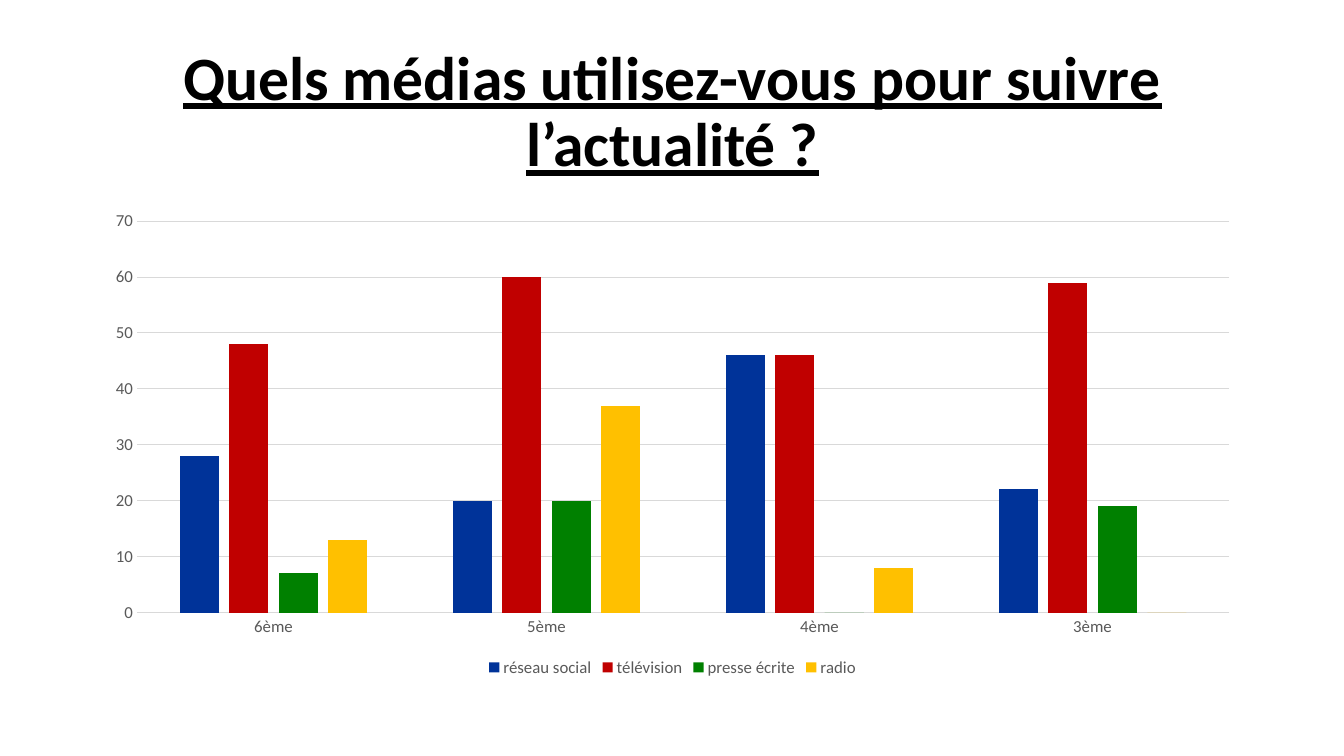
from dataclasses import dataclass

from pptx import Presentation
from pptx.chart.data import CategoryChartData
from pptx.dml.color import RGBColor
from pptx.enum.chart import XL_CHART_TYPE as ChartType
from pptx.enum.chart import XL_LEGEND_POSITION as LegendPosition
from pptx.enum.chart import XL_TICK_MARK as TickMark
from pptx.enum.text import MSO_ANCHOR as Anchor
from pptx.enum.text import PP_ALIGN as Align
from pptx.util import Inches, Pt


@dataclass(frozen=True)
class Theme:
    font: str = "Calibri"
    title_size: int = 44
    label_size: int = 12
    ink: str = "000000"
    label: str = "595959"
    grid: str = "D9D9D9"
    paper: str = "FFFFFF"
    line_width: float = 0.75


THEME = Theme()
LEVELS = ["6ème", "5ème", "4ème", "3ème"]
MEDIA = [
    ("réseau social", [28, 20, 46, 22], "003399"),
    ("télévision", [48, 60, 46, 59], "C00000"),
    ("presse écrite", [7, 20, 0, 19], "008000"),
    ("radio", [13, 37, 8, 0], "FFC000"),
]


def color(code):
    return RGBColor.from_string(code)


def format_font(font, size, code, bold=False, underline=False):
    font.name = THEME.font
    font.size = Pt(size)
    font.color.rgb = color(code)
    font.bold = bold
    font.underline = underline


def write_text(frame, text, align=Align.LEFT, spacing=1.0, **font_format):
    para = frame.paragraphs[0]
    para.alignment = align
    para.line_spacing = spacing
    span = para.add_run()
    span.text = text
    format_font(span.font, **font_format)


def format_line(line):
    line.color.rgb = color(THEME.grid)
    line.width = Pt(THEME.line_width)


def add_title(page, left, top, width, height):
    title = page.shapes.title
    title.left, title.top = Inches(left), Inches(top)
    title.width, title.height = Inches(width), Inches(height)
    title.text_frame.word_wrap = True
    title.text_frame.vertical_anchor = Anchor.MIDDLE
    write_text(title.text_frame, "Quels médias utilisez-vous pour suivre l’actualité ?",
               align=Align.CENTER, spacing=0.9, size=THEME.title_size,
               code=THEME.ink, bold=True, underline=True)


def add_media_chart(page, left, top, width, height):
    data = CategoryChartData()
    data.categories = LEVELS
    for name, values, _ in MEDIA:
        data.add_series(name, values)
    chart = page.shapes.add_chart(
        ChartType.COLUMN_CLUSTERED, Inches(left), Inches(top),
        Inches(width), Inches(height), data).chart
    chart.has_title = False
    format_font(chart.font, THEME.label_size, THEME.label)

    # Columns
    plot = chart.plots[0]
    plot.gap_width = 219
    plot.overlap = -27
    plot.vary_by_categories = False
    for series, (_, _, code) in zip(plot.series, MEDIA):
        series.format.fill.solid()
        series.format.fill.fore_color.rgb = color(code)
        series.invert_if_negative = False

    # Axes
    for axis in (chart.category_axis, chart.value_axis):
        axis.major_tick_mark = axis.minor_tick_mark = TickMark.NONE
        format_font(axis.tick_labels.font, THEME.label_size, THEME.label)
    format_line(chart.category_axis.format.line)
    values_axis = chart.value_axis
    values_axis.minimum_scale, values_axis.maximum_scale = 0, 70
    values_axis.major_unit = 10
    values_axis.format.line.fill.background()
    values_axis.has_major_gridlines = True
    format_line(values_axis.major_gridlines.format.line)

    # Legend
    chart.has_legend = True
    chart.legend.position = LegendPosition.BOTTOM
    chart.legend.include_in_layout = False
    format_font(chart.legend.font, THEME.label_size, THEME.label)


def main():
    deck = Presentation()
    deck.slide_width, deck.slide_height = Inches(13.33), Inches(7.5)
    title_only = deck.slide_layouts[5]
    page = deck.slides.add_slide(title_only)
    page.background.fill.solid()
    page.background.fill.fore_color.rgb = color(THEME.paper)
    add_title(page, 0.92, 0.4, 11.5, 1.45)
    add_media_chart(page, 0.92, 2, 11.5, 4.76)
    deck.save("out.pptx")


if __name__ == "__main__":
    main()
